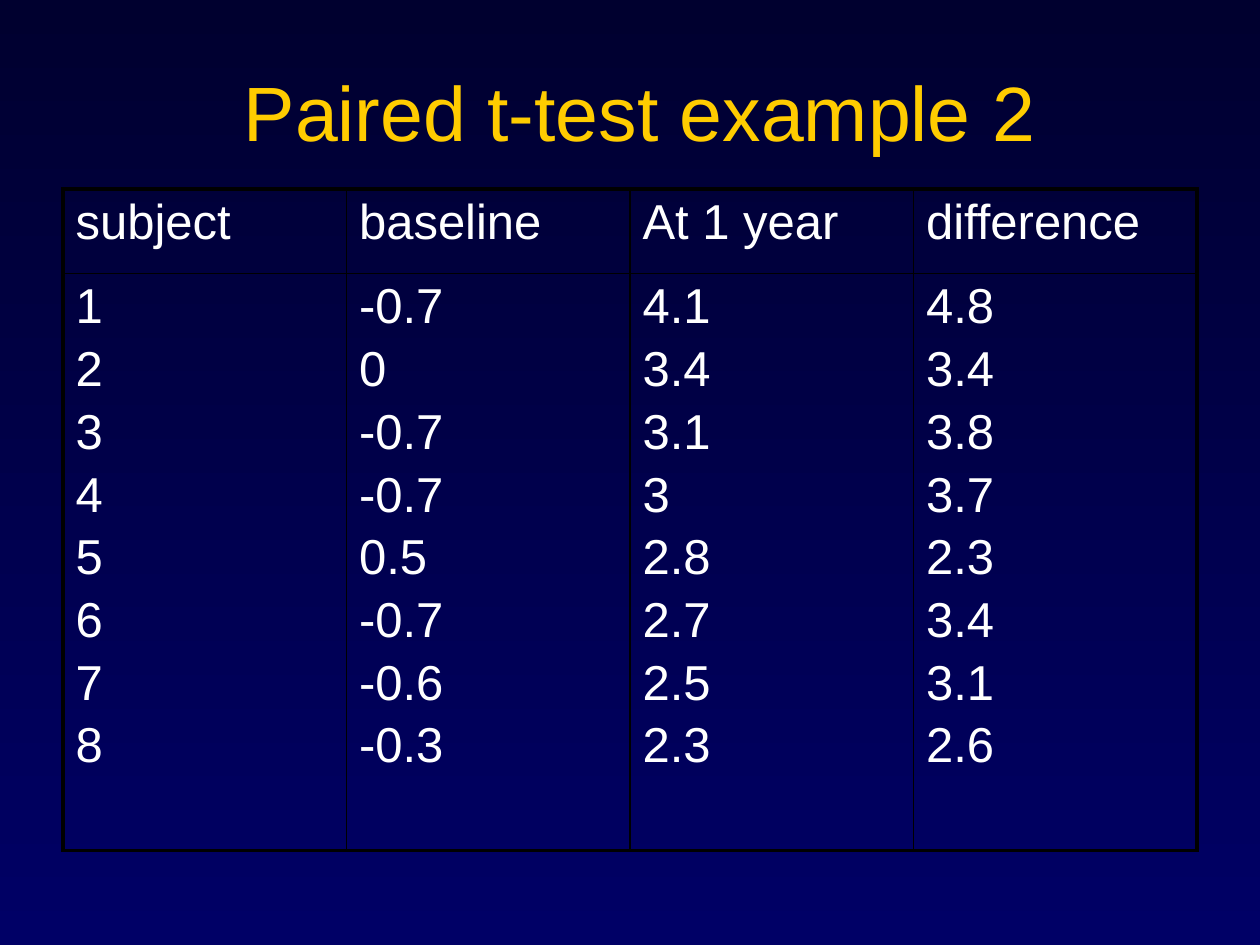
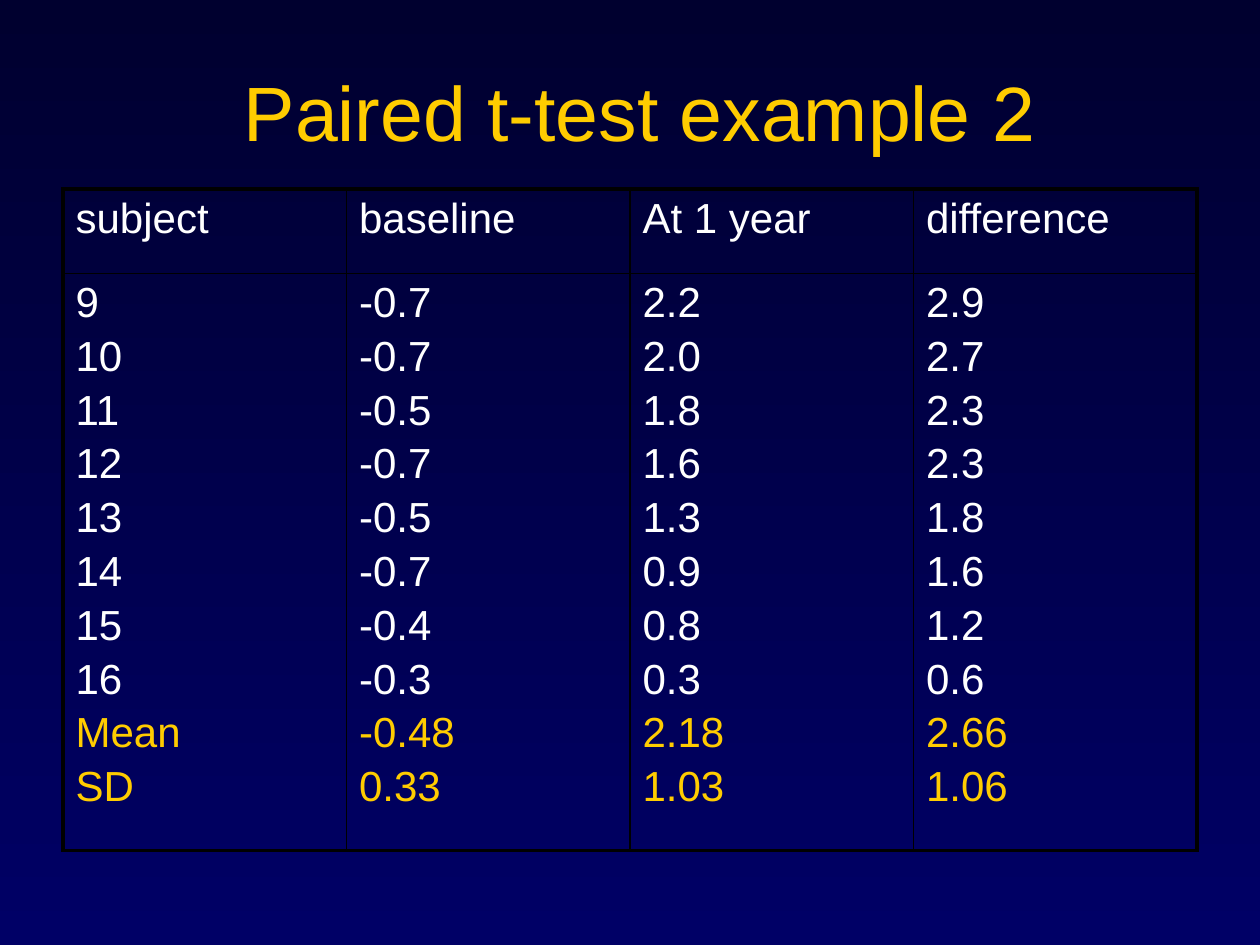
import pptx
import pptx.util
import pptx.dml.color
import pptx.enum.text
import pptx.oxml
import pptx.oxml.ns

PX = 9144
GOLD, WHITE, BLACK = "FFCC00", "FFFFFF", "000000"
GRADIENT = ["00002F", "000066"]
TITLE = "Paired t-test example 2"
HEADINGS = ["subject", "baseline", "At 1 year", "difference"]
SUMMARY_LABELS = ["Mean", "SD"]
COLUMN_WIDTH, ROW_HEIGHTS = 225, [67, 458]
OUTER_BORDER, INNER_BORDER = 2.25, 1

TABLES = [
    (28, [
        ["1", "2", "3", "4", "5", "6", "7", "8"],
        ["-0.7", "0", "-0.7", "-0.7", "0.5", "-0.7", "-0.6", "-0.3"],
        ["4.1", "3.4", "3.1", "3", "2.8", "2.7", "2.5", "2.3"],
        ["4.8", "3.4", "3.8", "3.7", "2.3", "3.4", "3.1", "2.6"],
    ]),
    (24, [
        ["9", "10", "11", "12", "13", "14", "15", "16", *SUMMARY_LABELS],
        ["-0.7", "-0.7", "-0.5", "-0.7", "-0.5", "-0.7", "-0.4", "-0.3", "-0.48", "0.33"],
        ["2.2", "2.0", "1.8", "1.6", "1.3", "0.9", "0.8", "0.3", "2.18", "1.03"],
        ["2.9", "2.7", "2.3", "2.3", "1.8", "1.6", "1.2", "0.6", "2.66", "1.06"],
    ]),
]


def color(hex_string):
    return pptx.dml.color.RGBColor.from_string(hex_string)


def write_text(paragraph, text, size, fill=WHITE, align="LEFT", space_before=0):
    paragraph.alignment = getattr(pptx.enum.text.PP_ALIGN, align)
    paragraph.space_before = pptx.util.Pt(space_before)
    run = paragraph.add_run()
    run.text = text
    run.font.name = "Arial"
    run.font.size = pptx.util.Pt(size)
    run.font.color.rgb = color(fill)


presentation = pptx.Presentation()
presentation.slide_width = 1000 * PX
presentation.slide_height = 750 * PX

background = presentation.slide_master.background.fill
background.gradient()
background.gradient_angle = 270
for stop, shade in zip(background.gradient_stops, GRADIENT):
    stop.color.rgb = color(shade)

for size, columns in TABLES:
    slide = presentation.slides.add_slide(presentation.slide_layouts[5])
    title = slide.shapes.title
    title.left, title.top, title.width, title.height = 58 * PX, 25 * PX, 900 * PX, 125 * PX
    title.text_frame.vertical_anchor = pptx.enum.text.MSO_ANCHOR.MIDDLE
    write_text(title.text_frame.paragraphs[0], TITLE, size=44, fill=GOLD, align="CENTER")

    table = slide.shapes.add_table(
        len(ROW_HEIGHTS), len(HEADINGS), 50 * PX, 150 * PX,
        len(HEADINGS) * COLUMN_WIDTH * PX, sum(ROW_HEIGHTS) * PX,
    ).table
    table.first_row = False
    table.horz_banding = False
    for row, height in zip(table.rows, ROW_HEIGHTS):
        row.height = height * PX

    last_row, last_column = len(ROW_HEIGHTS) - 1, len(HEADINGS) - 1
    for column_index, (heading, values) in enumerate(zip(HEADINGS, columns)):
        table.columns[column_index].width = COLUMN_WIDTH * PX
        for row_index, lines in enumerate([[heading], values]):
            cell = table.cell(row_index, column_index)
            for line_index, line in enumerate(lines):
                is_summary = row_index > 0 and columns[0][line_index] in SUMMARY_LABELS
                frame = cell.text_frame
                paragraph = frame.add_paragraph() if line_index else frame.paragraphs[0]
                write_text(paragraph, line, size=size, fill=GOLD if is_summary else WHITE,
                           space_before=size * 0.165 if line_index else 0)

            outer_sides = {
                "lnL": column_index == 0,
                "lnR": column_index == last_column,
                "lnT": row_index == 0,
                "lnB": row_index == last_row,
            }
            cell_properties = cell._tc.get_or_add_tcPr()
            for side, is_outer in outer_sides.items():
                width = pptx.util.Pt(OUTER_BORDER if is_outer else INNER_BORDER)
                cell_properties.append(pptx.oxml.parse_xml(
                    f'<a:{side} {pptx.oxml.ns.nsdecls("a")} w="{width}"><a:solidFill>'
                    f'<a:srgbClr val="{BLACK}"/></a:solidFill></a:{side}>'))
            cell.fill.background()

presentation.save("out.pptx")
